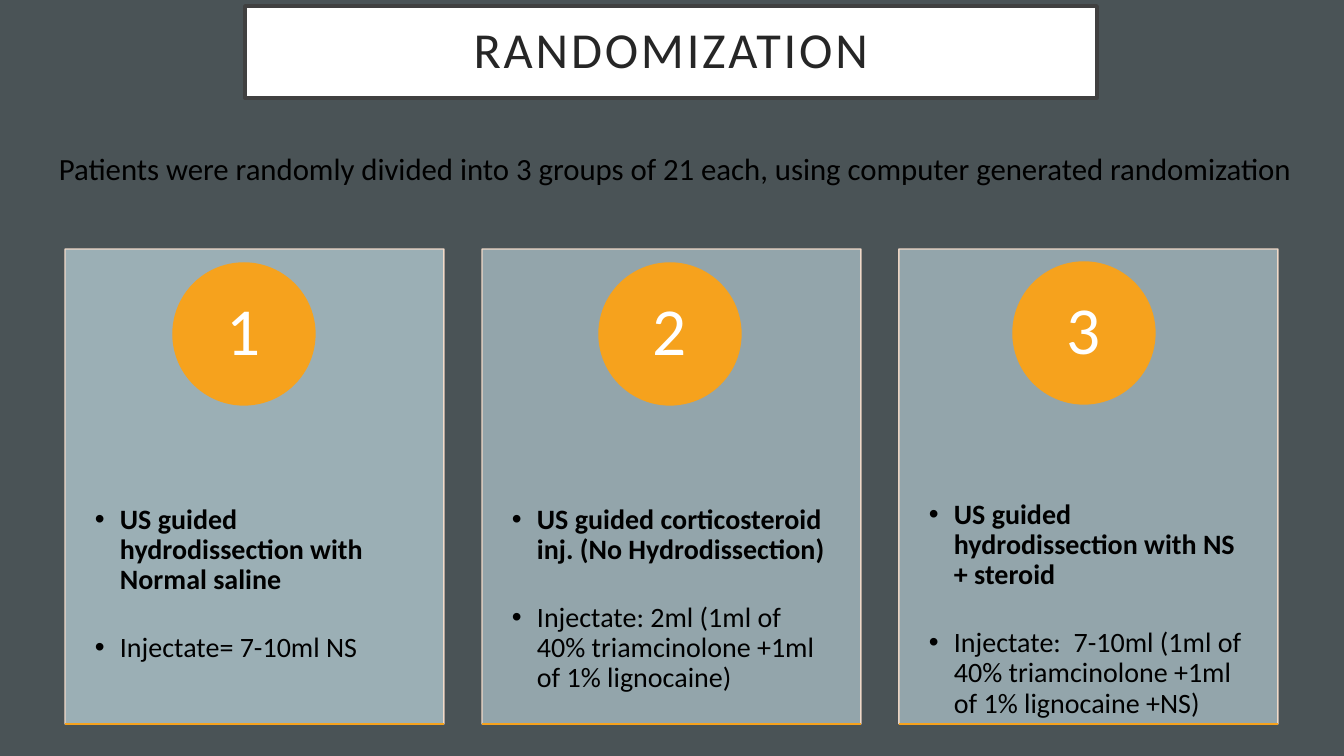
import lxml.etree
import pptx
import pptx.util
import pptx.dml.color
import pptx.enum.shapes
import pptx.enum.text
import pptx.oxml.ns

Pt = pptx.util.Pt
FORMS = pptx.enum.shapes.MSO_SHAPE
ALIGN = pptx.enum.text.PP_ALIGN
ANCHOR = pptx.enum.text.MSO_ANCHOR
FONT = "Calibri"
ORANGE = "F6A21D"
CARDS = [
    ("1", 100, (108, 14), 256,
     "US guided hydrodissection with Normal saline",
     "Injectate= 7-10ml NS"),
    ("2", 90, (117, 14), 256,
     "US guided corticosteroid inj. (No Hydrodissection)",
     "Injectate: 2ml (1ml of 40% triamcinolone +1ml of 1% lignocaine)"),
    ("3", 90, (114, 13), 251,
     "US guided hydrodissection with NS + steroid",
     "Injectate:  7-10ml (1ml of 40% triamcinolone +1ml of 1% lignocaine +NS)"),
]


def px(n):
    return round(n * 914400 / 100.8)


def area(*box):
    return [px(n) for n in box]


def rgb(code):
    return pptx.dml.color.RGBColor.from_string(code)


def add(node, tag, **attrs):
    child = lxml.etree.SubElement(node, pptx.oxml.ns.qn(tag))
    for key, value in attrs.items():
        child.set(key, str(value))


def fade(fill, share):
    node = fill._xPr.find(pptx.oxml.ns.qn("a:solidFill"))
    add(node[0], "a:alpha", val=share * 1000)


def paint(shape, fill, line, width):
    shape.fill.solid()
    shape.fill.fore_color.rgb = rgb(fill)
    shape.line.color.rgb = rgb(line)
    shape.line.width = Pt(width)


def form(slide, kind, box, fill, line):
    shape = slide.shapes.add_shape(kind, *area(*box))
    shape.shadow.inherit = False
    paint(shape, fill, line, 1)
    return shape


def setup(frame, anchor, inset=0):
    frame.word_wrap = True
    frame.auto_size = pptx.enum.text.MSO_AUTO_SIZE.NONE
    frame.vertical_anchor = anchor
    frame.margin_left = frame.margin_right = px(inset)
    frame.margin_top = frame.margin_bottom = 0


def style(para, size, color, align=ALIGN.LEFT, bold=False):
    para.alignment = align
    para.line_spacing = 0.9
    for run in para.runs:
        run.font.name = FONT
        run.font.size = Pt(size)
        run.font.bold = bold
        run.font.color.rgb = rgb(color)


def head(slide, box):
    title = slide.shapes.title
    title.left, title.top, title.width, title.height = area(*box)
    paint(title, "FFFFFF", "404040", 2.5)
    frame = title.text_frame
    frame.text = "RANDOMIZATION"
    setup(frame, ANCHOR.MIDDLE, 20)
    style(frame.paragraphs[0], 36, "262626", ALIGN.CENTER)
    frame.paragraphs[0].runs[0].font._element.set("spc", "200")


def lead(slide, box):
    frame = slide.shapes.add_textbox(*area(*box)).text_frame
    frame.text = ("Patients were randomly divided into 3 groups of 21 each, "
                  "using computer generated randomization")
    setup(frame, ANCHOR.MIDDLE, 10)
    style(frame.paragraphs[0], 22, "000000")


def badge(slide, box, digit):
    disc = form(slide, FORMS.OVAL, box, ORANGE, ORANGE)
    disc.text_frame.text = digit
    setup(disc.text_frame, ANCHOR.MIDDLE)
    style(disc.text_frame.paragraphs[0], 48, "FFFFFF", ALIGN.CENTER)


def points(slide, box, lines):
    frame = slide.shapes.add_textbox(*area(*box)).text_frame
    frame.text = "\n".join(lines)
    setup(frame, ANCHOR.TOP)
    for i, para in enumerate(frame.paragraphs):
        style(para, 20, "000000", bold=i == 0)
        para.space_after = Pt(27 if i == 0 else 0)
        props = para._p.get_or_add_pPr()
        props.set("marL", str(px(25)))
        props.set("indent", str(-px(25)))
        add(props, "a:buFont", typeface="Arial")
        add(props, "a:buChar", char="•")


def card(slide, box, digit, share, spot, drop, *lines):
    x, y, w, h = box
    panel = form(slide, FORMS.RECTANGLE, box, "9BAFB5", "FBE0CD")
    fade(panel.fill, share)
    fade(panel.line.fill, 90)
    badge(slide, (x + spot[0], y + spot[1], 142, 142), digit)
    points(slide, (x + 30, y + drop, w - 60, h - drop), lines)
    base = slide.shapes.add_connector(
        pptx.enum.shapes.MSO_CONNECTOR.STRAIGHT, *area(x, y + h, x + w, y + h))
    base.line.color.rgb = rgb(ORANGE)
    base.line.width = Pt(1)
    add(base._element.spPr, "a:effectLst")


def main():
    deck = pptx.Presentation()
    deck.slide_width, deck.slide_height = area(1344, 756)
    slide = deck.slides.add_slide(deck.slide_layouts[5])
    slide.background.fill.solid()
    slide.background.fill.fore_color.rgb = rgb("4A5356")
    head(slide, (245, 6, 852, 92))
    lead(slide, (49, 147, 1267, 47))
    width, gap = 379, 38
    for i, data in enumerate(CARDS):
        card(slide, (65 + i * (width + gap), 249, width, 475), *data)
    deck.save("out.pptx")


if __name__ == "__main__":
    main()
